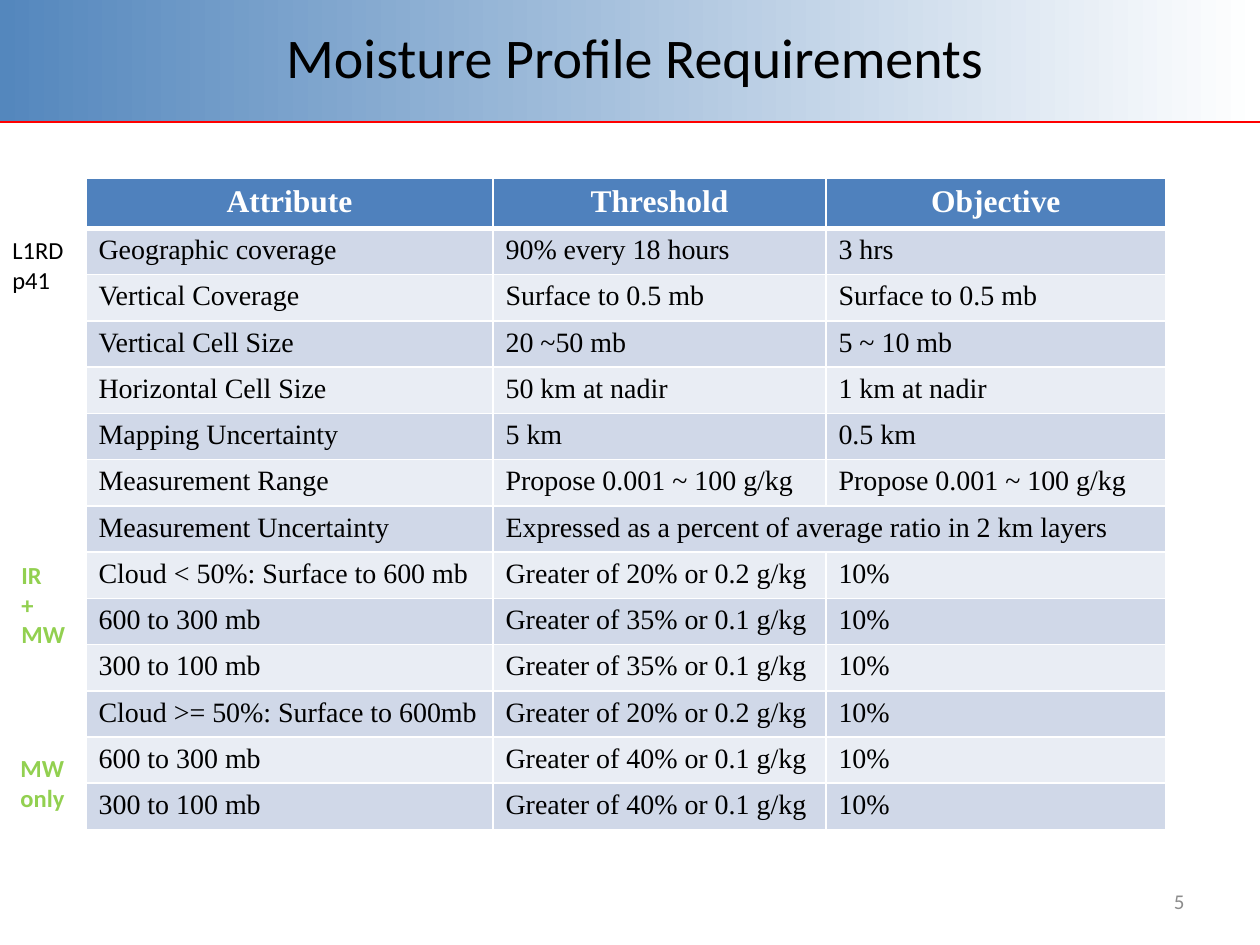
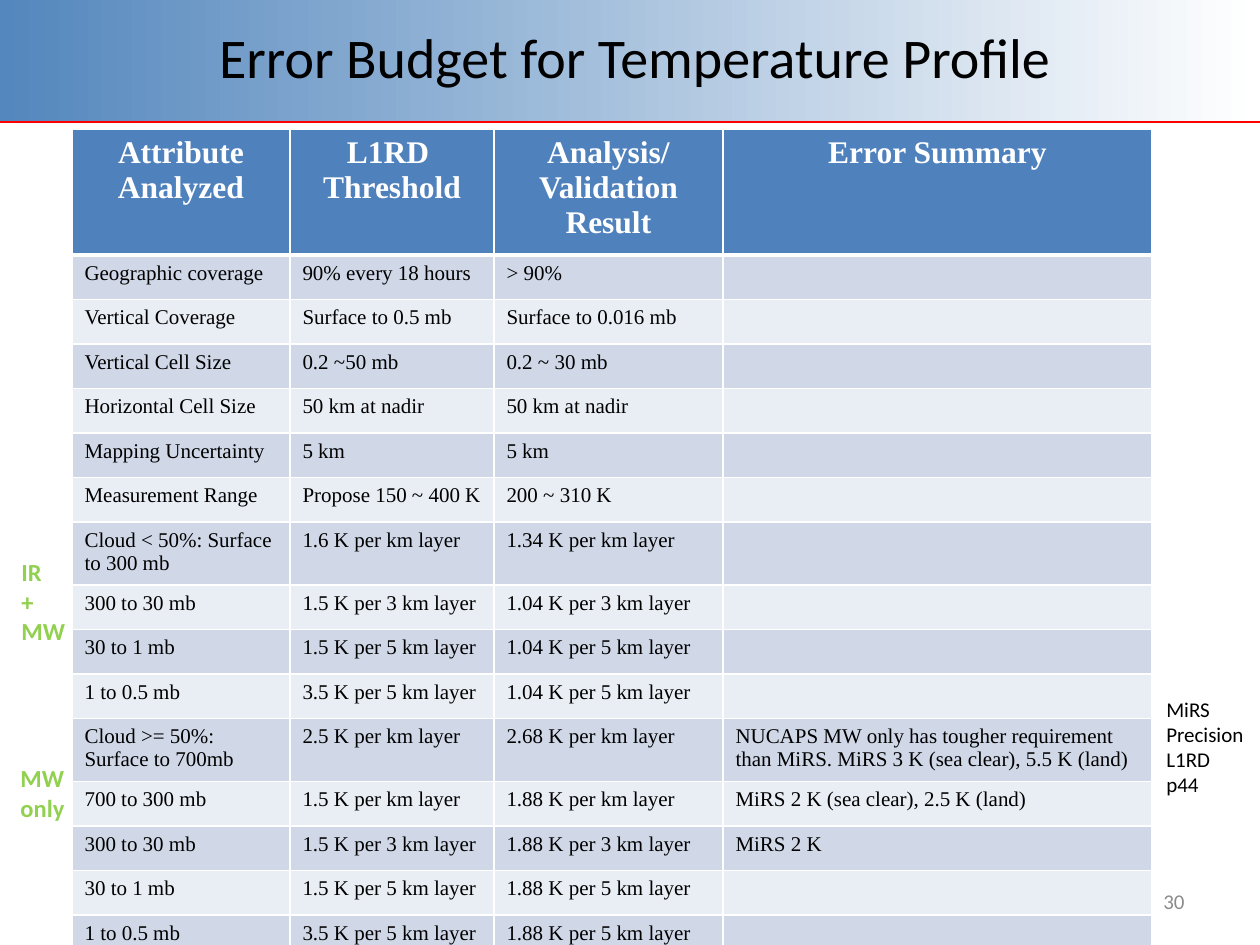
from lxml.etree import SubElement
from pptx import Presentation
from pptx.dml.color import RGBColor
from pptx.enum.shapes import MSO_CONNECTOR, MSO_SHAPE
from pptx.enum.text import MSO_ANCHOR, MSO_AUTO_SIZE, PP_ALIGN
from pptx.oxml.ns import qn
from pptx.util import Pt

WIDE, HIGH = 1260, 945
BAND = 122
HEAD_ROW, ROW = 49, 89 / 2
BLUE, WHITE, BLACK = "4F81BD", "FFFFFF", "000000"
RED, GREEN, GRAY = "FF0000", "92D050", "8C8C8C"
STRIPES = "E9EDF4", "D0D8E8"
SANS, SERIF = "Calibri", "Times New Roman"
LEFT, MID, RIGHT = PP_ALIGN.LEFT, PP_ALIGN.CENTER, PP_ALIGN.RIGHT

# In table rows None joins a cell to the one on its left; short rows end in empty cells.
SLIDES = [
    dict(
        title="Moisture Profile Requirements",
        number="5",
        table=dict(
            at=(86, 178),
            size=16,
            cols=(407, 333, 340),
            head=("Attribute", "Threshold", "Objective"),
            rows=[
                ("Geographic coverage", "90% every 18 hours", "3 hrs"),
                ("Vertical Coverage", "Surface to 0.5 mb", "Surface to 0.5 mb"),
                ("Vertical Cell Size", "20 ~50 mb", "5 ~ 10 mb"),
                ("Horizontal Cell Size", "50 km at nadir", "1 km at nadir"),
                ("Mapping Uncertainty", "5 km", "0.5 km"),
                ("Measurement Range", "Propose 0.001 ~ 100 g/kg", "Propose 0.001 ~ 100 g/kg"),
                ("Measurement Uncertainty",
                 "Expressed as a percent of average ratio in 2 km layers", None),
                ("Cloud < 50%: Surface to 600 mb", "Greater of 20% or 0.2 g/kg", "10%"),
                ("600 to 300 mb", "Greater of 35% or 0.1 g/kg", "10%"),
                ("300 to 100 mb", "Greater of 35% or 0.1 g/kg", "10%"),
                ("Cloud >= 50%: Surface to 600mb", "Greater of 20% or 0.2 g/kg", "10%"),
                ("600 to 300 mb", "Greater of 40% or 0.1 g/kg", "10%"),
                ("300 to 100 mb", "Greater of 40% or 0.1 g/kg", "10%"),
            ],
        ),
        notes=[
            ("IR\n+\nMW", (9, 554, 69, 102), dict(size=14, color=GREEN, bold=True)),
            ("MW\nonly", (8, 747, 69, 72), dict(size=14, color=GREEN, bold=True)),
            ("L1RD\np41", (0, 229, 77, 72), dict(size=14)),
        ],
    ),
    dict(
        title="Error Budget for Temperature Profile",
        number="30",
        table=dict(
            at=(72, 129),
            size=12,
            cols=(218, 204, 229, 429),
            head=("Attribute\nAnalyzed", "L1RD \nThreshold",
                  "Analysis/Validation Result", "Error Summary"),
            rows=[
                ("Geographic coverage", "90% every 18 hours", "> 90%"),
                ("Vertical Coverage", "Surface to 0.5 mb", "Surface to 0.016 mb"),
                ("Vertical Cell Size", "0.2 ~50 mb", "0.2 ~ 30 mb"),
                ("Horizontal Cell Size", "50 km at nadir", "50 km at nadir"),
                ("Mapping Uncertainty", "5 km", "5 km"),
                ("Measurement Range", "Propose 150 ~ 400 K", "200 ~ 310 K"),
                ("Cloud < 50%: Surface to 300 mb", "1.6 K per km layer", "1.34 K per km layer"),
                ("300 to 30 mb", "1.5 K per 3 km layer", "1.04 K per 3 km layer"),
                ("30 to 1 mb", "1.5 K per 5 km layer", "1.04 K per 5 km layer"),
                ("1 to 0.5 mb", "3.5 K per 5 km layer", "1.04 K per 5 km layer"),
                ("Cloud >= 50%: Surface to 700mb", "2.5 K per km layer", "2.68 K per km layer",
                 "NUCAPS MW only has tougher requirement than MiRS. "
                 "MiRS 3 K (sea clear), 5.5 K (land)"),
                ("700 to 300 mb", "1.5 K per km layer", "1.88 K per km layer",
                 "MiRS 2 K (sea clear), 2.5 K (land)"),
                ("300 to 30 mb", "1.5 K per 3 km layer", "1.88 K per 3 km layer", "MiRS 2 K"),
                ("30 to 1 mb", "1.5 K per 5 km layer", "1.88 K per 5 km layer"),
                ("1 to 0.5 mb", "3.5 K per 5 km layer", "1.88 K per 5 km layer"),
            ],
        ),
        notes=[
            ("IR\n+\nMW", (9, 551, 69, 102), dict(size=14, color=GREEN, bold=True)),
            ("MW\nonly", (8, 757, 69, 72), dict(size=14, color=GREEN, bold=True)),
            ("MiRS\nPrecision\nL1RD\np44", (1154, 690, 103, 115), dict(size=12)),
        ],
    ),
]


def px(*vals):
    return [round(v * 914400 / 126) for v in vals]


def rgb(code):
    return RGBColor.from_string(code)


def write(frame, text, size=12, color=BLACK, font=SANS, bold=False, align=LEFT):
    """Fill a text frame, one paragraph per line."""
    for i, line in enumerate(text.split("\n")):
        para = frame.add_paragraph() if i else frame.paragraphs[0]
        para.alignment = align
        if not line:
            # An empty line takes its height from its end mark.
            SubElement(para._p, qn("a:endParaRPr"), sz=str(size * 100))
            continue
        run = para.add_run()
        run.text = line
        run.font.size, run.font.name, run.font.bold = Pt(size), font, bold
        run.font.color.rgb = rgb(color)


def add_text(slide, text, at, wrap=True, **style):
    frame = slide.shapes.add_textbox(*px(*at)).text_frame
    frame.word_wrap = wrap
    if wrap:
        frame.vertical_anchor = MSO_ANCHOR.MIDDLE
    else:
        frame.auto_size = MSO_AUTO_SIZE.SHAPE_TO_FIT_TEXT
    write(frame, text, **style)


def add_band(slide):
    band = slide.shapes.add_shape(MSO_SHAPE.RECTANGLE, *px(0, -1, WIDE, BAND + 1))
    band.shadow.inherit = False
    band.line.fill.background()
    band.fill.gradient()
    band.fill.gradient_angle = 0
    for stop, color in zip(band.fill.gradient_stops, ("5487BD", WHITE)):
        stop.color.rgb = rgb(color)
    rule = slide.shapes.add_connector(MSO_CONNECTOR.STRAIGHT, *px(0, BAND, WIDE, BAND))
    rule.line.color.rgb = rgb(RED)
    rule.line.width = Pt(1.25)
    SubElement(rule._element.spPr, qn("a:effectLst"))


def set_edges(cell, **widths):
    """Draw white borders, 1 pt unless a side is given a width."""
    props = cell._tc.get_or_add_tcPr()
    for side in "LRTB":
        edge = SubElement(props, qn("a:ln" + side), w=str(Pt(widths.get(side, 1))))
        SubElement(SubElement(edge, qn("a:solidFill")), qn("a:srgbClr"), val=WHITE)


def add_grid(slide, at, size, cols, head, rows):
    high = HEAD_ROW + ROW * len(rows)
    grid = slide.shapes.add_table(
        len(rows) + 1, len(cols), *px(*at, sum(cols), high)).table
    for col, wide in zip(grid.columns, px(*cols)):
        col.width = wide
    for r, row in enumerate([head, *rows]):
        grid.rows[r].height = px(ROW if r else HEAD_ROW)[0]
        for c in range(len(cols)):
            text = row[c] if c < len(row) else ""
            cell = grid.cell(r, c)
            set_edges(cell, **({0: {"B": 3}, 1: {"T": 3}}.get(r, {})))
            cell.fill.solid()
            cell.fill.fore_color.rgb = rgb(STRIPES[r % 2] if r else BLUE)
            if text is None:
                grid.cell(r, c - 1).merge(cell)
            elif r:
                write(cell.text_frame, text, size=size, font=SERIF)
            else:
                write(cell.text_frame, text, size=18, color=WHITE, font=SERIF,
                      bold=True, align=MID)


def main():
    deck = Presentation()
    deck.slide_width, deck.slide_height = px(WIDE, HIGH)
    for item in SLIDES:
        slide = deck.slides.add_slide(deck.slide_layouts[6])
        add_band(slide)
        add_text(slide, item["title"], (136, 0, 998, 113), size=32, align=MID)
        add_text(slide, item["number"], (903, 876, 294, 50), color=GRAY, align=RIGHT)
        add_grid(slide, **item["table"])
        for text, at, style in item["notes"]:
            add_text(slide, text, at, wrap=False, **style)
    deck.save("out.pptx")


if __name__ == "__main__":
    main()
